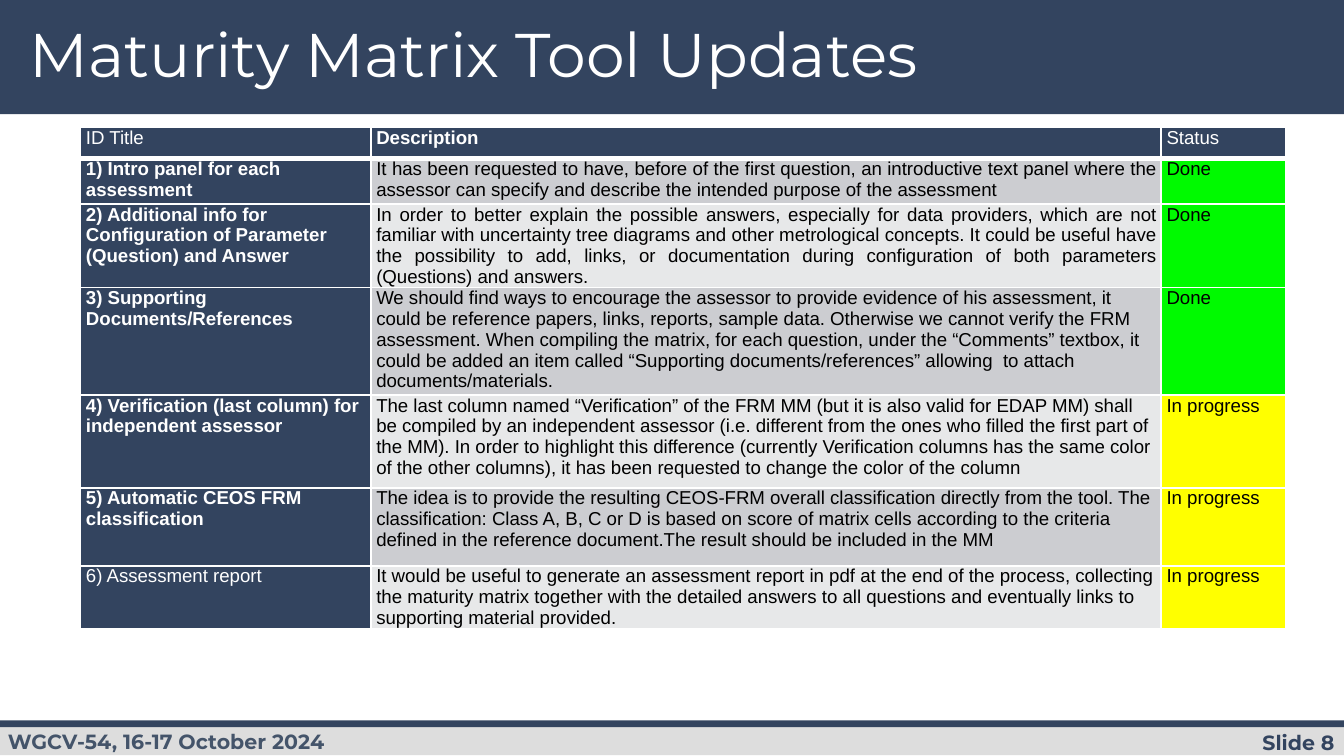
from dataclasses import dataclass

from lxml.etree import SubElement
from pptx import Presentation
from pptx.dml.color import RGBColor
from pptx.enum.shapes import MSO_SHAPE
from pptx.enum.text import MSO_ANCHOR, PP_ALIGN
from pptx.oxml.ns import qn
from pptx.util import Inches, Pt


@dataclass(frozen=True)
class Theme:
    # Colours
    navy: str = "33445F"
    slate: str = "44546A"
    band: str = "DDDDDD"
    dark: str = "CCCDD1"
    light: str = "E7E8E9"
    green: str = "00FA00"
    yellow: str = "FFFF00"
    white: str = "FFFFFF"
    black: str = "000000"
    # Fonts and sizes
    head: str = "Montserrat"
    body: str = "Arial"
    big: int = 33
    foot: int = 11
    cell: int = 10


def put_text(frame, text, *, font, size, color, bold=False,
             align=PP_ALIGN.LEFT, space=1.0):
    frame.word_wrap = True
    para = frame.paragraphs[0]
    para.text = text
    para.alignment = align
    para.line_spacing = space
    style = para.runs[0].font
    style.name, style.size, style.bold = font, Pt(size), bold
    style.color.rgb = RGBColor.from_string(color)


def set_pad(box, side, top):
    box.margin_left = box.margin_right = Inches(side)
    box.margin_top = box.margin_bottom = Inches(top)


class Page:
    def __init__(self, deck, theme):
        self.theme = theme
        self.slide = deck.slides.add_slide(deck.slide_layouts[5])
        self.shapes = self.slide.shapes

    def bar(self, top, height, color):
        bar = self.shapes.add_shape(MSO_SHAPE.RECTANGLE, 0, Inches(top),
                                    Inches(10), Inches(height))
        bar.shadow.inherit = False
        bar.fill.solid()
        bar.fill.fore_color.rgb = RGBColor.from_string(color)
        bar.line.fill.background()

    def title(self, text, spot):
        box = self.shapes.title
        box.left, box.top, box.width, box.height = map(Inches, spot)
        frame = box.text_frame
        frame.vertical_anchor = MSO_ANCHOR.TOP
        set_pad(frame, 0.07, 0.04)
        put_text(frame, text, font=self.theme.head, size=self.theme.big,
                 color=self.theme.white, space=0.9)
        # Bring the title in front of its bar
        self.shapes._spTree.append(box._element)

    def label(self, text, spot, pad, color, align=PP_ALIGN.LEFT):
        frame = self.shapes.add_textbox(*map(Inches, spot)).text_frame
        set_pad(frame, *pad)
        put_text(frame, text, font=self.theme.head, size=self.theme.foot,
                 color=color, bold=True, align=align)

    def edge(self, cell, **widths):
        props = cell._tc.get_or_add_tcPr()
        for side in "LRTB":
            line = SubElement(props, qn(f"a:ln{side}"),
                              w=str(Pt(widths.get(side, 1))))
            fill = SubElement(line, qn("a:solidFill"))
            SubElement(fill, qn("a:srgbClr"), val=self.theme.white)

    def cell(self, cell, text, fill, color, bold, align, **widths):
        set_pad(cell, 0.04, 0)
        self.edge(cell, **widths)
        cell.fill.solid()
        cell.fill.fore_color.rgb = RGBColor.from_string(fill)
        put_text(cell.text_frame, text, font=self.theme.body,
                 size=self.theme.cell, color=color, bold=bold, align=align)

    def table(self, left, top, cols, rows, heads, items):
        t = self.theme
        grid = self.shapes.add_table(
            len(rows), len(cols), Inches(left), Inches(top),
            Inches(sum(cols)), Inches(sum(rows))).table
        for col, width in zip(grid.columns, cols):
            col.width = Inches(width)
        for row, height in zip(grid.rows, rows):
            row.height = Inches(height)
        # Header row, with a thick rule below
        for c, text in enumerate(heads):
            align = PP_ALIGN.JUSTIFY if c < 2 else PP_ALIGN.LEFT
            self.cell(grid.cell(0, c), text, t.navy, t.white, c == 1,
                      align, B=3)
        # Body rows: banded text, status colour
        states = {"Done": t.green, "In progress": t.yellow}
        for r, (name, text, state) in enumerate(items, 1):
            rule = {"T": 3} if r == 1 else {}
            align = PP_ALIGN.JUSTIFY if r < 3 else PP_ALIGN.LEFT
            band = t.dark if r % 2 else t.light
            self.cell(grid.cell(r, 0), name, t.navy, t.white,
                      r < len(items), PP_ALIGN.LEFT, **rule)
            self.cell(grid.cell(r, 1), text, band, t.black, False,
                      align, **rule)
            self.cell(grid.cell(r, 2), state, states[state], t.black, False,
                      PP_ALIGN.LEFT, **rule)


ITEMS = [
    ("1) Intro panel for each assessment",
     "It has been requested to have, before of the first question, an "
     "introductive text panel where the assessor can specify and describe "
     "the intended purpose of the assessment", "Done"),
    ("2) Additional info for Configuration of Parameter (Question) and Answer",
     "In order to better explain the possible answers, especially for data "
     "providers, which are not familiar with uncertainty tree diagrams and "
     "other metrological concepts. It could be useful have the possibility "
     "to add, links, or documentation during configuration of both "
     "parameters (Questions) and answers.", "Done"),
    ("3) Supporting Documents/References",
     "We should find ways to encourage the assessor to provide evidence of "
     "his assessment, it could be reference papers, links, reports, sample "
     "data. Otherwise we cannot verify the FRM assessment. When compiling "
     "the matrix, for each question, under the “Comments” textbox, it could "
     "be added an item called “Supporting documents/references” allowing  to "
     "attach documents/materials.", "Done"),
    ("4) Verification (last column) for independent assessor ",
     "The last column named “Verification” of the FRM MM (but it is also "
     "valid for EDAP MM) shall be compiled by an independent assessor (i.e. "
     "different from the ones who filled the first part of the MM). In order "
     "to highlight this difference (currently Verification columns has the "
     "same color of the other columns), it has been requested to change the "
     "color of the column", "In progress"),
    ("5) Automatic CEOS FRM classification",
     "The idea is to provide the resulting CEOS-FRM overall classification "
     "directly from the tool. The classification: Class A, B, C or D is based "
     "on score of matrix cells according to the criteria defined in the "
     "reference document.The result should be included in the MM",
     "In progress"),
    ("6) Assessment report",
     "It would be useful to generate an assessment report in pdf at the end "
     "of the process, collecting the maturity matrix together with the "
     "detailed answers to all questions and eventually links to supporting "
     "material provided.", "In progress"),
]


def main():
    deck = Presentation()
    # Widescreen, 16 to 9
    deck.slide_width = Inches(10)
    deck.slide_height = deck.slide_width * 9 // 16
    theme = Theme()
    page = Page(deck, theme)

    # Header and footer bars
    page.bar(0, 0.85, theme.navy)
    page.bar(5.39, 0.23, theme.band)
    page.bar(5.36, 0.05, theme.navy)

    # Footer text
    page.label("Slide 8", (8.42, 5.39, 1.58, 0.26), (0.07, 0.04),
               theme.navy, PP_ALIGN.RIGHT)
    page.label("WGCV-54, 16-17 October 2024", (-0.04, 5.33, 5.55, 0.39),
               (0.1, 0.1), theme.slate)

    # Title and table of updates
    page.title("Maturity Matrix Tool Updates", (0.15, 0.14, 7.7, 0.64))
    page.table(0.6, 0.95, (2.16, 5.88, 0.93),
               (0.23, 0.34, 0.58, 0.8, 0.69, 0.58, 0.46),
               ("ID Title", "Description", "Status"), ITEMS)
    deck.save("out.pptx")


if __name__ == "__main__":
    main()
